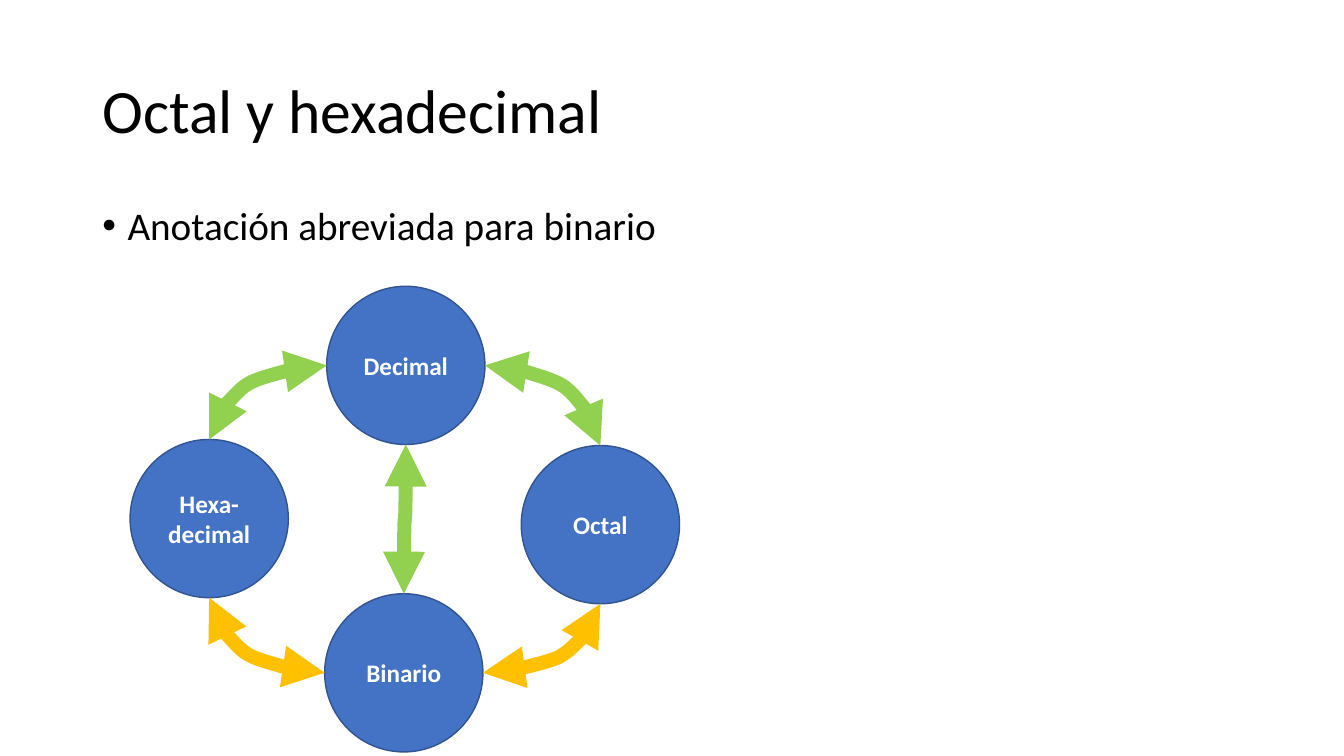
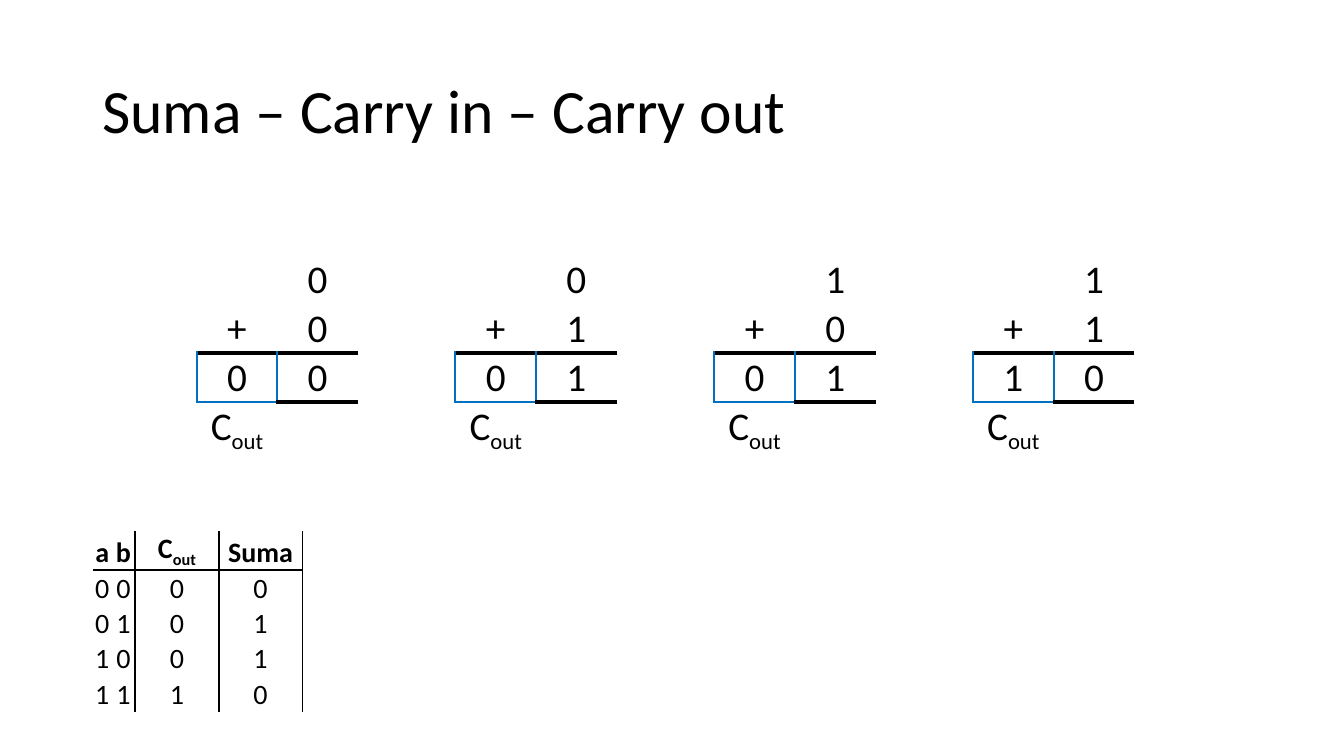
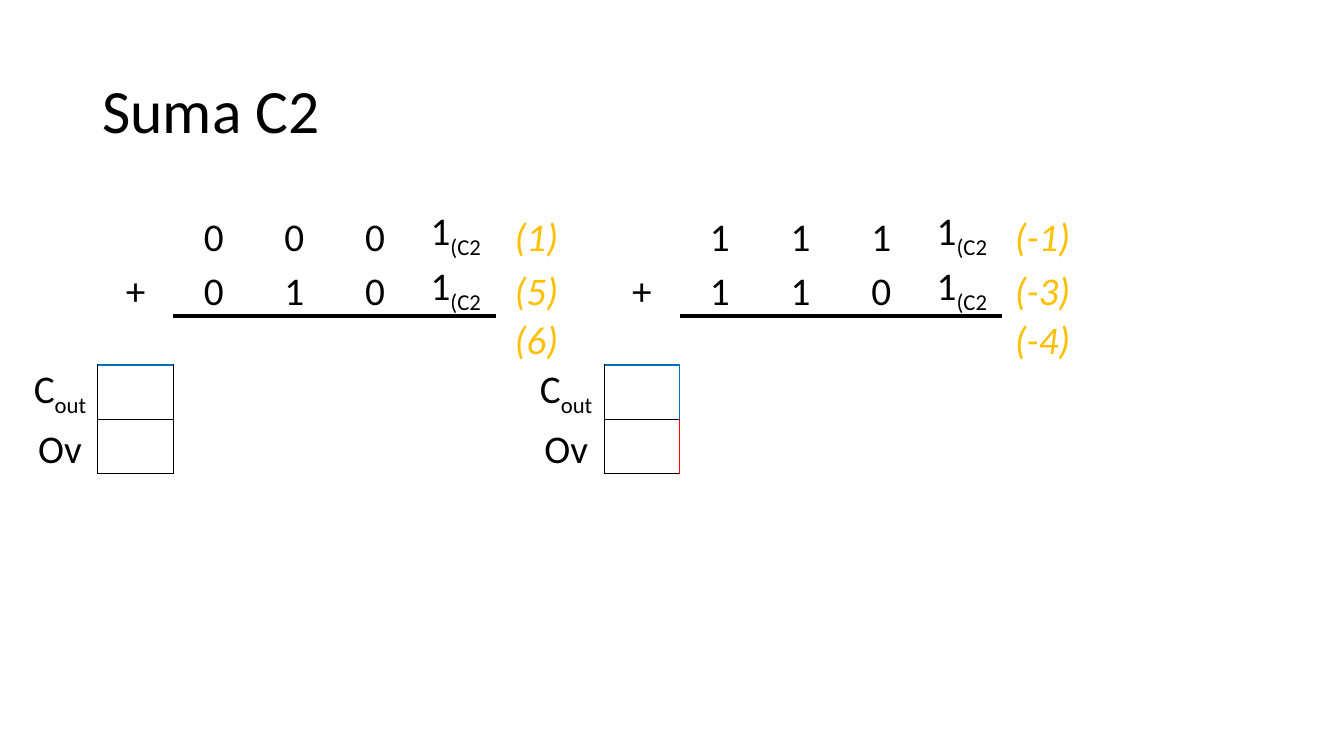
"""Three slides on number bases and binary addition."""
import lxml.etree
import pptx
import pptx.dml.color
import pptx.enum.shapes
import pptx.enum.text
import pptx.oxml.ns
import pptx.util

Inches = pptx.util.Inches
Pt = pptx.util.Pt
qn = pptx.oxml.ns.qn
RGBColor = pptx.dml.color.RGBColor

BLACK = RGBColor(0x00, 0x00, 0x00)
WHITE = RGBColor(0xFF, 0xFF, 0xFF)
CIRCLE_FILL = RGBColor(0x44, 0x72, 0xC4)
CIRCLE_LINE = RGBColor(0x32, 0x54, 0x91)
GREEN = RGBColor(0x92, 0xD0, 0x50)
GOLD = RGBColor(0xFF, 0xC0, 0x00)
BLUE = RGBColor(0x00, 0x70, 0xC0)
RED = RGBColor(0xFF, 0x00, 0x00)
FONT = "Calibri"
PLAIN_TABLE = "{2D5ABB26-0587-4C30-8999-92F81FD0307C}"
BORDER_TAGS = [qn("a:ln" + side) for side in "LRTB"]


def add_grid(slide, left, top, columns, rows, texts, size):
    """Add an unstyled table; an underscore in a text starts a subscript."""
    frame = slide.shapes.add_table(len(rows), len(columns), Inches(left), Inches(top),
                                   Inches(sum(columns)), Inches(sum(rows)))
    table = frame.table
    table.first_row = table.horz_banding = False
    frame.element.find(".//" + qn("a:tableStyleId")).text = PLAIN_TABLE
    for column, width in zip(table.columns, columns):
        column.width = Inches(width)
    for row, height in zip(table.rows, rows):
        row.height = Inches(height)
    for cell in table.iter_cells():
        cell.fill.background()
    for (row, column), text in texts.items():
        cell = table.cell(row, column)
        cell.vertical_anchor = pptx.enum.text.MSO_ANCHOR.BOTTOM
        cell.margin_left = cell.margin_right = cell.margin_top = Inches(0.01)
        cell.margin_bottom = 0
        para = cell.text_frame.paragraphs[0]
        para.alignment = pptx.enum.text.PP_ALIGN.CENTER
        for position, part in enumerate(text.split("_")):
            span = para.add_run()
            span.text = part
            span.font.name = FONT
            span.font.size = Pt(size)
            decimal_value = text.startswith("(")
            span.font.italic = decimal_value
            span.font.color.rgb = GOLD if decimal_value else BLACK
            if position:
                span.font._element.set("baseline", "-25000")
    return table


def draw_borders(cell, sides, color, width):
    """Draw the borders named by the letters L, R, T and B."""
    properties = cell._tc.get_or_add_tcPr()
    for side in sides:
        order = "LRTB".index(side)
        place = sum(child.tag in BORDER_TAGS[:order] for child in properties)
        line = lxml.etree.Element(BORDER_TAGS[order], w=str(Pt(width)))
        fill = lxml.etree.SubElement(line, qn("a:solidFill"))
        lxml.etree.SubElement(fill, qn("a:srgbClr"), val=str(color))
        properties.insert(place, line)


deck = pptx.Presentation()
deck.slide_width = Inches(13.33)
deck.slide_height = Inches(7.5)

content_width = Inches(11.5)
content_left = (deck.slide_width - content_width) // 2
for holder, top, height in zip(deck.slide_master.placeholders, (0.4, 2), (1.45, 4.76)):
    holder.left, holder.width = content_left, content_width
    holder.top, holder.height = Inches(top), Inches(height)

slides = []
for heading, layout in (("Octal y hexadecimal", "Title and Content"),
                        ("Suma – Carry in – Carry out", "Title Only"),
                        ("Suma C2", "Title Only")):
    slide = deck.slides.add_slide(deck.slide_layouts.get_by_name(layout))
    slide.shapes.title.text_frame.text = heading
    para = slide.shapes.title.text_frame.paragraphs[0]
    para.alignment = pptx.enum.text.PP_ALIGN.LEFT
    para.line_spacing = 0.9
    para.runs[0].font.name = FONT
    para.runs[0].font.size = Pt(44)
    para.runs[0].font.color.rgb = BLACK
    slides.append(slide)
bases_slide, carry_slide, complement_slide = slides

body = bases_slide.placeholders[1]
body.text_frame.text = "Anotación abreviada para binario"
para = body.text_frame.paragraphs[0]
para.line_spacing = 0.9
para.space_before = Pt(10)
para._p.get_or_add_pPr().set("marL", str(Inches(0.25)))
para._p.get_or_add_pPr().set("indent", str(Inches(-0.25)))
para.runs[0].font.name = FONT
para.runs[0].font.size = Pt(28)
para.runs[0].font.color.rgb = BLACK

diameter = Inches(1.57)
circles = {}
for label, left, top in (("Octal", 5.17, 4.42), ("Binario", 3.22, 5.89),
                         ("Decimal", 3.24, 2.84), ("Hexa-decimal", 1.29, 4.36)):
    circle = bases_slide.shapes.add_shape(pptx.enum.shapes.MSO_SHAPE.OVAL, Inches(left),
                                          Inches(top), diameter, diameter)
    circle.shadow.inherit = False
    circle.fill.solid()
    circle.fill.fore_color.rgb = CIRCLE_FILL
    circle.line.color.rgb = CIRCLE_LINE
    circle.line.width = Pt(1)
    circle.text_frame.text = label
    para = circle.text_frame.paragraphs[0]
    para.alignment = pptx.enum.text.PP_ALIGN.CENTER
    font = para.runs[0].font
    font.name, font.size, font.bold = FONT, Pt(18), True
    font.color.rgb = WHITE
    circles[label] = circle

SITES = {"top": (0, 0.5, 0), "left": (2, 0, 0.5), "bottom": (4, 0.5, 1), "right": (6, 1, 0.5)}
for start, start_side, end, end_side, color in (
        ("Decimal", "right", "Octal", "top", GREEN),
        ("Decimal", "left", "Hexa-decimal", "top", GREEN),
        ("Decimal", "bottom", "Binario", "top", GREEN),
        ("Binario", "right", "Octal", "bottom", GOLD),
        ("Binario", "left", "Hexa-decimal", "bottom", GOLD)):
    (x1, y1), (x2, y2) = [
        (int(circles[name].left + SITES[side][1] * diameter),
         int(circles[name].top + SITES[side][2] * diameter))
        for name, side in ((start, start_side), (end, end_side))]
    vertical = start_side == "bottom"
    if vertical:
        middle_x, middle_y = (x1 + x2) // 2, (y1 + y2) // 2
        half_length, half_shift = (y2 - y1) // 2, (x1 - x2) // 2
        x1, x2 = middle_x - half_length, middle_x + half_length
        y1, y2 = middle_y - half_shift, middle_y + half_shift
    arrow = bases_slide.shapes.add_connector(
        pptx.enum.shapes.MSO_CONNECTOR.CURVE, x1, y1, x2, y2)
    arrow.line.color.rgb = color
    arrow.line.width = Pt(10)
    properties = arrow.element.spPr
    if vertical:
        properties.find(qn("a:xfrm")).set("rot", "5400000")
    else:
        properties.find(qn("a:prstGeom")).set("prst", "curvedConnector2")
    for tag in ("a:headEnd", "a:tailEnd"):
        lxml.etree.SubElement(properties.find(qn("a:ln")), qn(tag), type="triangle")
    lxml.etree.SubElement(properties, qn("a:effectLst"))
    links = arrow.element.find(".//" + qn("p:cNvCxnSpPr"))
    for tag, name, side in (("a:stCxn", start, start_side), ("a:endCxn", end, end_side)):
        lxml.etree.SubElement(links, qn(tag), id=str(circles[name].shape_id),
                              idx=str(SITES[side][0]))

truth_rows = ("0000", "0101", "1001", "1110")
first_left, last_left = 1.15, 8.85
for number, (a, b, carry, total) in enumerate(truth_rows):
    left = first_left + number * (last_left - first_left) / 3
    texts = {(1, 2): a, (2, 1): "+", (2, 2): b, (3, 1): carry, (3, 2): total, (4, 1): "C_out"}
    table = add_grid(carry_slide, left, 2.06, [0.8] * 4, [0.47] + [0.48] * 4, texts, 28)
    for column in (1, 2):
        draw_borders(table.cell(2, column), "B", BLACK, 3)
        draw_borders(table.cell(3, column), "T", BLACK, 3)
    draw_borders(table.cell(3, 1), "LRB", BLUE, 1.5)

truth_lines = [("a", "b", "C_out", "Suma"), *truth_rows]
texts = {(row, column): text for row, line in enumerate(truth_lines)
         for column, text in enumerate(line)}
table = add_grid(carry_slide, 0.92, 5.27, [0.19, 0.23, 0.83, 0.83], [0.38] + [0.35] * 4, texts, 20)
for row, column in texts:
    if column:
        draw_borders(table.cell(row, column), "R", BLACK, 1.5)
    if row == 0:
        draw_borders(table.cell(row, column), "B", BLACK, 1.5)
        for span in table.cell(row, column).text_frame.paragraphs[0].runs:
            span.font.bold = True

for left, first, second, values, carry_edge, overflow_edge in (
        (5.24, "1111", "1101", ("(-1)", "(-3)", "(-4)"), (BLUE, 1.5), (RED, 1.5)),
        (0.22, "0001", "0101", ("(1)", "(5)", "(6)"), (BLACK, 0.5), (BLACK, 0.5))):
    texts = {(2, 1): "+", (4, 0): "C_out", (5, 0): "Ov"}
    for row, digits in ((1, first), (2, second)):
        for column, digit in enumerate(digits, 2):
            texts[row, column] = digit + "_(C2" if column == 5 else digit
    for row, value in enumerate(values, 1):
        texts[row, 6] = value
    table = add_grid(complement_slide, left, 1.57, [0.75] * 2 + [0.8] * 5,
                     [0.49, 0.53, 0.53, 0.48, 0.53, 0.54], texts, 28)
    for column in range(2, 6):
        draw_borders(table.cell(2, column), "B", BLACK, 3)
    draw_borders(table.cell(4, 1), "T", BLUE, 1.5)
    for row, edge in ((4, carry_edge), (5, overflow_edge)):
        draw_borders(table.cell(row, 1), "LB", BLACK, 0.5)
        draw_borders(table.cell(row, 1), "R", *edge)

deck.save("out.pptx")
